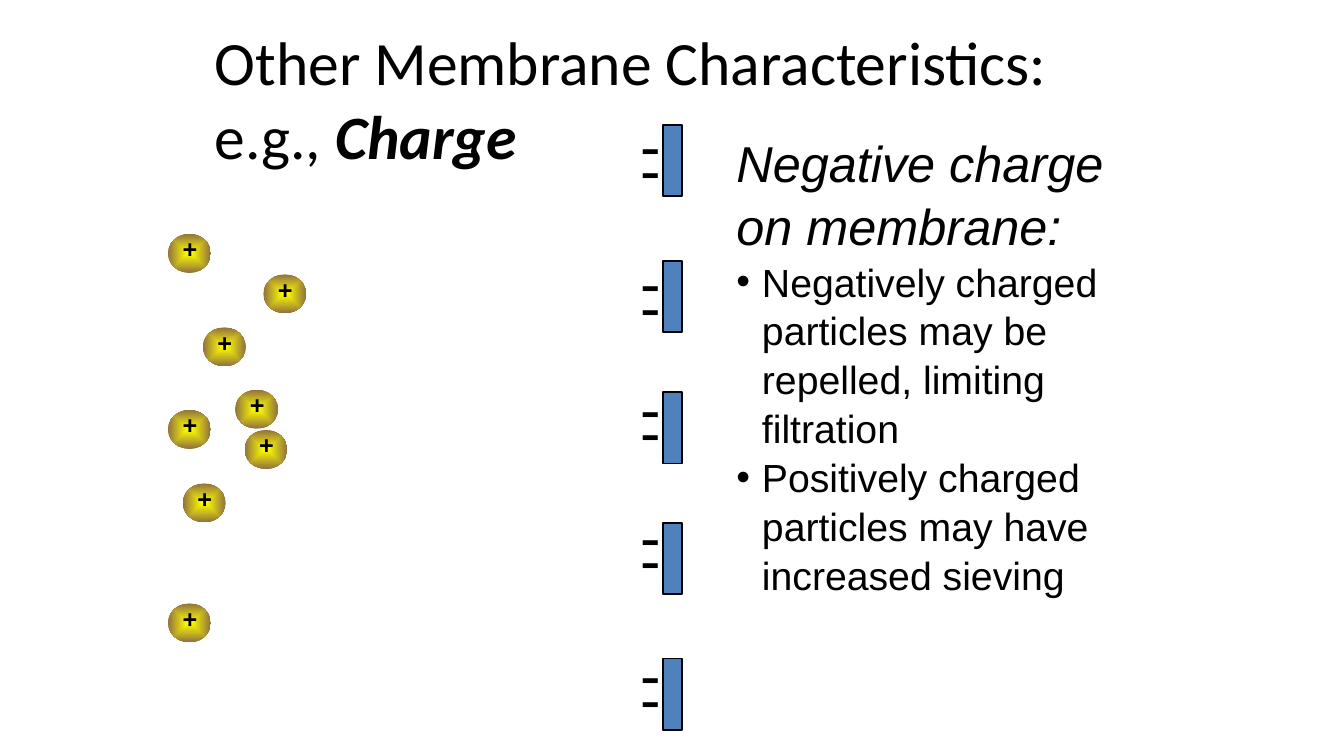
"""Build a slide on how membrane charge affects the filtration of charged particles."""
from lxml.etree import SubElement
from pptx import Presentation
from pptx.dml.color import RGBColor
from pptx.enum.shapes import MSO_SHAPE as Shape
from pptx.enum.text import MSO_ANCHOR as Anchor
from pptx.oxml.ns import qn
from pptx.util import Pt

BLACK = RGBColor(0x00, 0x00, 0x00)
BLUE = RGBColor(0x4F, 0x81, 0xBD)
YELLOW = RGBColor(0xFF, 0xFF, 0x00)
BROWN = RGBColor(0x91, 0x71, 0x3E)


def add_box(left, top, width, height, wrap=True):
    box = page.shapes.add_textbox(Pt(left), Pt(top), Pt(width), Pt(height))
    box.text_frame.word_wrap = wrap
    return box.text_frame


def add_span(para, text, size, font="Arial", bold=False, italic=False):
    span = para.add_run()
    span.text = text
    span.font.name = font
    span.font.size = Pt(size)
    span.font.bold = bold
    span.font.italic = italic
    span.font.color.rgb = BLACK


deck = Presentation()
deck.slide_width, deck.slide_height = Pt(720), Pt(405)
page = deck.slides.add_slide(deck.slide_layouts[6])

for top in (67, 139.7, 210.2, 280.2, 352.8):
    segment = page.shapes.add_shape(Shape.RECTANGLE, Pt(355), Pt(top), Pt(10.2), Pt(38.2))
    segment.shadow.inherit = False
    segment.fill.solid()
    segment.fill.fore_color.rgb = BLUE
    segment.line.color.rgb = BLACK
    segment.line.width = Pt(1)

for top in (54, 127.2, 194.6, 263, 337.2):
    for offset in (0, 12.6):
        minus = add_box(336.2, top + offset, 22.3, 47.5)
        add_span(minus.paragraphs[0], "-", 33)

PARTICLES = [
    (90, 125.3), (90, 219.6), (90, 323.3), (108.7, 175.4),
    (126, 208.8), (97.9, 259), (141.1, 147), (131, 230.4),
]
for left, top in PARTICLES:
    particle = page.shapes.add_shape(Shape.OVAL, Pt(left), Pt(top), Pt(23), Pt(20.9))
    particle.shadow.inherit = False
    particle.line.fill.background()
    particle.fill.gradient()
    for stop, color in zip(particle.fill.gradient_stops, (YELLOW, BROWN)):
        stop.color.rgb = color
    gradient = particle.element.spPr.find(qn("a:gradFill"))
    gradient.remove(gradient.find(qn("a:lin")))
    center = SubElement(gradient, qn("a:path"), {"path": "shape"})
    SubElement(center, qn("a:fillToRect"), dict.fromkeys("ltrb", "50000"))

    plus = add_box(left + 0.7, top - 3.7, 22.3, 23.8, wrap=False)
    add_span(plus.paragraphs[0], "+", 13.5, bold=True)

title = add_box(108, 36, 499.7, 67.7)
title.vertical_anchor = Anchor.BOTTOM
title.margin_bottom = Pt(11.5)
add_span(title.paragraphs[0], "Other Membrane Characteristics: e.g., ", 33, "Calibri")
add_span(title.paragraphs[0], "Charge", 33, "Calibri", bold=True, italic=True)

effects = add_box(387.4, 66.2, 243.4, 250.6)
heading = effects.paragraphs[0]
heading.line_spacing = 1.04
add_span(heading, "Negative charge on membrane:", 27, italic=True)
for text in (
    "Negatively charged particles may be repelled, limiting filtration",
    "Positively charged particles may have increased sieving",
):
    para = effects.add_paragraph()
    para.line_spacing = 1.04
    indent = Pt(13.7)
    layout = para._p.get_or_add_pPr()
    layout.set("marL", str(indent))
    layout.set("indent", str(-indent))
    SubElement(layout, qn("a:buFont"), {"typeface": "Arial"})
    SubElement(layout, qn("a:buChar"), {"char": "•"})
    add_span(para, text, 21)

deck.save("out.pptx")
